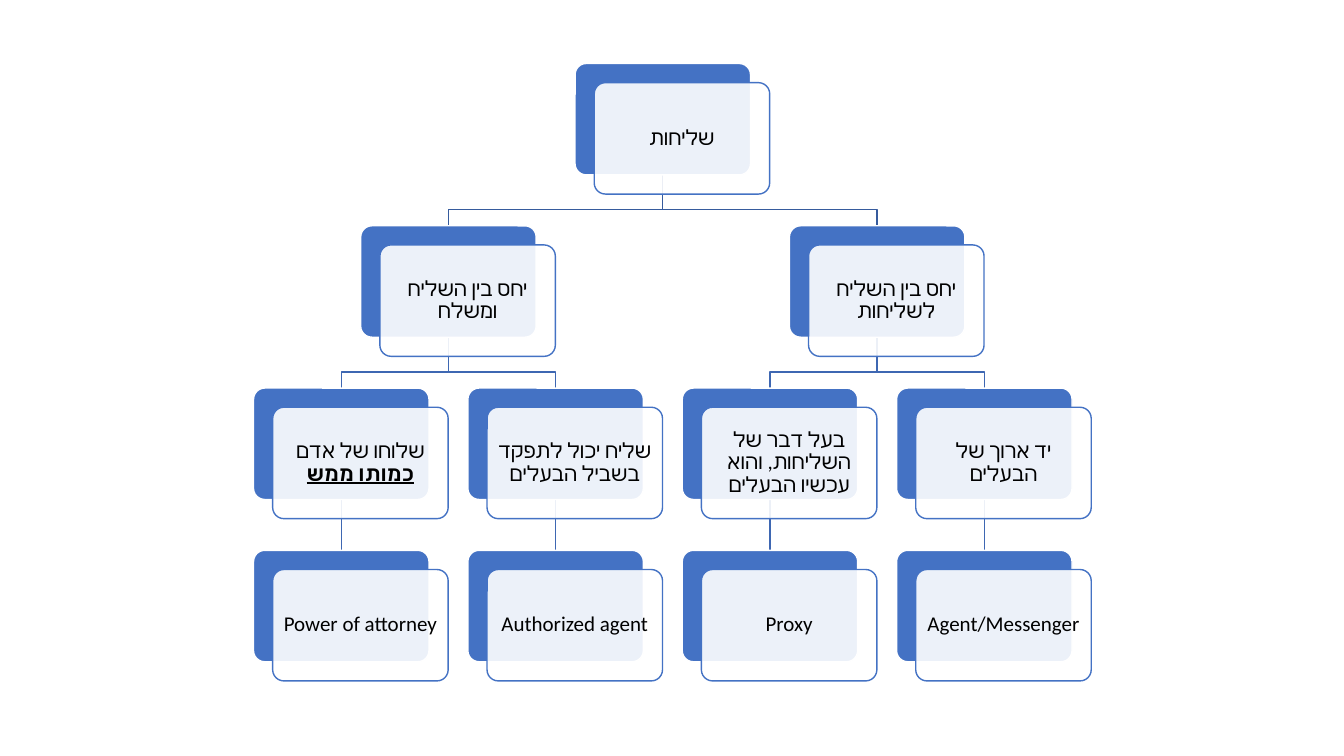
"""Build a four-level tree of layered cards about agency."""
from dataclasses import dataclass, field
from typing import Any, NamedTuple, Optional

from lxml import etree
from pptx import Presentation
from pptx import util as u
from pptx.dml.color import RGBColor
from pptx.enum import shapes, text
from pptx.oxml.ns import qn


@dataclass(frozen=True)
class Theme:
    """Colours and type of the slide."""
    accent: RGBColor = RGBColor(0x44, 0x72, 0xC4)
    paper: RGBColor = RGBColor(0xFF, 0xFF, 0xFF)
    ink: RGBColor = RGBColor(0, 0, 0)
    first_branch: RGBColor = RGBColor(0x36, 0x5B, 0x9D)
    branch: RGBColor = RGBColor(0x3E, 0x67, 0xB2)
    font: str = "Calibri"
    size: u.Pt = u.Pt(15)
    stroke: u.Pt = u.Pt(1)
    front_opacity: int = 90


@dataclass(frozen=True)
class Grid:
    """Columns and rows of the tree, in inches."""
    left: float = 2.515
    top: float = 0.63
    column: float = 2.126
    row: float = 1.61
    width: float = 1.74
    height: float = 1.105
    shift: float = 0.19
    bend: float = 0.16
    inset: float = 0.06

    def x(self, column: float) -> float:
        """Return the left edge of a column."""
        return self.left + column * self.column

    def y(self, row: int) -> float:
        """Return the top edge of a row."""
        return self.top + row * self.row

    def middle(self, column: float) -> u.Length:
        """Return the centre line of a column."""
        return u.Inches(self.x(column) + self.width / 2)


class Span(NamedTuple):
    """A stretch of text with its emphasis."""
    words: str
    emphasis: dict[str, bool] = {}


@dataclass(frozen=True)
class Card:
    """A node at a grid position, with its children."""
    column: float
    row: int
    spans: list[Span]
    children: list["Card"] = field(default_factory=list)


THEME = Theme()
GRID = Grid()


def leaf_pair(column: int, spans: list[Span], role: str) -> Card:
    """Return a third-level card with its English role below."""
    return Card(column, 2, spans, [Card(column, 3, [Span(role)])])


TREE = Card(1.5, 0, [Span("שליחות")], [
    Card(0.5, 1, [Span("יחס בין השליח ומשלח")], [
        leaf_pair(0, [Span("שלוחו של אדם "),
                      Span("כמותו ממש", {"bold": True, "underline": True})],
                  "Power of attorney"),
        leaf_pair(1, [Span("שליח יכול לתפקד בשביל הבעלים")], "Authorized agent"),
    ]),
    Card(2.5, 1, [Span("יחס בין השליח לשליחות")], [
        leaf_pair(2, [Span("בעל דבר של השליחות, והוא עכשיו הבעלים")], "Proxy"),
        leaf_pair(3, [Span("יד ארוך של הבעלים")], "Agent/Messenger"),
    ]),
])


def apply(target: Any, values: dict[str, Any]) -> None:
    """Set each named attribute on the target."""
    for name, value in values.items():
        setattr(target, name, value)


def set_line(line: Any, colour: RGBColor) -> None:
    """Give a line its colour and the common weight."""
    line.color.rgb = colour
    line.width = THEME.stroke


def draw_branch(page: Any, parent: Card, child: Card) -> None:
    """Join a parent's lower edge to a child's upper edge."""
    start_x, end_x = GRID.middle(parent.column), GRID.middle(child.column)
    start_y = u.Inches(GRID.y(parent.row) + GRID.height)
    end_y = u.Inches(GRID.y(child.row))
    if start_x == end_x:
        branch = page.shapes.add_connector(
            shapes.MSO_CONNECTOR.STRAIGHT, start_x, start_y, end_x, end_y)
    else:
        bend_y = end_y - u.Inches(GRID.bend)
        outline = page.shapes.build_freeform(start_x, start_y)
        outline.add_line_segments(
            [(start_x, bend_y), (end_x, bend_y), (end_x, end_y)], close=False)
        branch = outline.convert_to_shape()
        branch.fill.background()
        branch.shadow.inherit = False
    set_line(branch.line, THEME.branch if parent.row else THEME.first_branch)
    if start_x == end_x:
        etree.SubElement(branch.element.spPr, qn("a:effectLst"))


def draw_box(page: Any, card: Card, shift: float, fill: RGBColor,
             line: RGBColor, opacity: Optional[int] = None) -> Any:
    """Draw one rounded layer of a card."""
    box = page.shapes.add_shape(
        shapes.MSO_SHAPE.ROUNDED_RECTANGLE,
        u.Inches(GRID.x(card.column) + shift), u.Inches(GRID.y(card.row) + shift),
        u.Inches(GRID.width), u.Inches(GRID.height))
    box.adjustments[0] = 0.1
    box.shadow.inherit = False
    box.fill.solid()
    box.fill.fore_color.rgb = fill
    set_line(box.line, line)
    if opacity is not None:
        colour = box.element.spPr.find(qn("a:solidFill")).find(qn("a:srgbClr"))
        etree.SubElement(colour, qn("a:alpha"), val=str(opacity * 1000))
    return box


def write_spans(box: Any, spans: list[Span]) -> None:
    """Write centred right-to-left text in a box."""
    frame = box.text_frame
    margins = {f"margin_{side}": u.Inches(GRID.inset)
               for side in ("left", "right", "top", "bottom")}
    apply(frame, {"word_wrap": True, "vertical_anchor": text.MSO_ANCHOR.MIDDLE, **margins})
    para = frame.paragraphs[0]
    apply(para, {"alignment": text.PP_ALIGN.CENTER, "line_spacing": 0.9})
    para._p.get_or_add_pPr().set("rtl", "1")
    for span in spans:
        run = para.add_run()
        run.text = span.words
        apply(run.font, {"name": THEME.font, "size": THEME.size, **span.emphasis})
        run.font.color.rgb = THEME.ink
        etree.SubElement(run.font._element, qn("a:cs"), typeface=THEME.font)


def draw_branches(page: Any, card: Card) -> None:
    """Draw all branches below a card."""
    for child in card.children:
        draw_branch(page, card, child)
        draw_branches(page, child)


def draw_cards(page: Any, card: Card) -> None:
    """Draw a card and all cards below it."""
    draw_box(page, card, 0, THEME.accent, THEME.paper)
    front = draw_box(page, card, GRID.shift, THEME.paper, THEME.accent,
                     THEME.front_opacity)
    write_spans(front, card.spans)
    for child in card.children:
        draw_cards(page, child)


def main() -> None:
    """Build and save the deck."""
    deck = Presentation()
    apply(deck, {"slide_width": u.Inches(13.33), "slide_height": u.Inches(7.5)})
    page = deck.slides.add_slide(deck.slide_layouts[6])
    draw_branches(page, TREE)
    draw_cards(page, TREE)
    deck.save("out.pptx")


if __name__ == "__main__":
    main()
